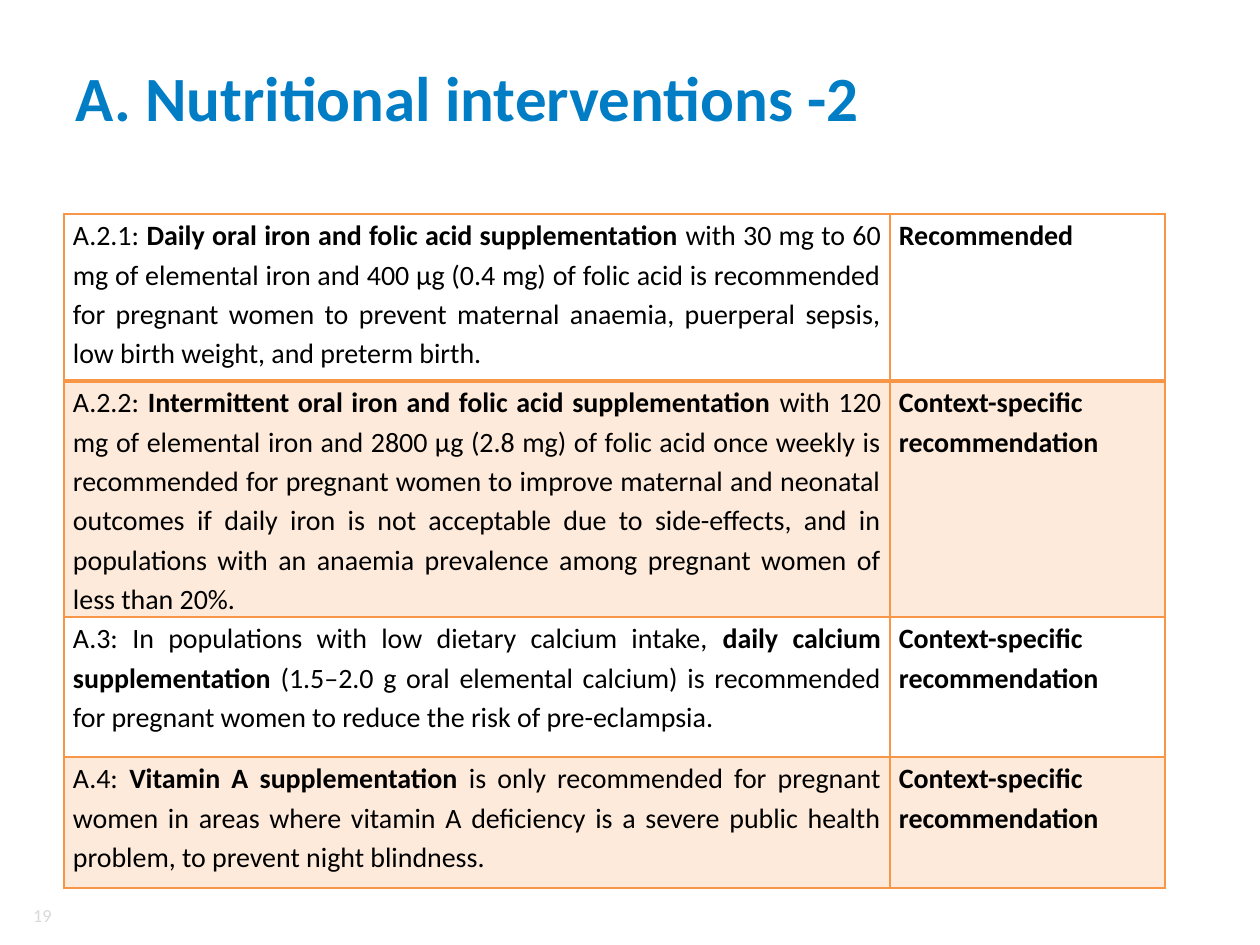
import pptx
import pptx.util
import pptx.dml.color
import pptx.enum.text
import pptx.oxml
import pptx.oxml.ns
import lxml.etree

SCALE = 914400 / 126
ALIGN = pptx.enum.text.PP_ALIGN
ANCHOR = pptx.enum.text.MSO_ANCHOR
THEME = {
    "font": "Calibri",
    "title": {"size": 36, "color": "007DC5"},
    "body": {"size": 16, "color": "000000"},
    "number": {"size": 10.5, "color": "D9D9D9"},
    "accent": "F79646",
    "tint": 20,
}


def px(length):
    return pptx.util.Emu(round(length * SCALE))


def add_span(para, text, style, bold=False):
    span = para.add_run()
    span.text = text
    formats = {"name": THEME["font"], "size": pptx.util.Pt(style["size"]), "bold": bold}
    for name, value in formats.items():
        setattr(span.font, name, value)
    span.font.color.rgb = pptx.dml.color.RGBColor.from_string(style["color"])


deck = pptx.Presentation()
deck.slide_width, deck.slide_height = px(1260), px(945)
page = deck.slides.add_slide(deck.slide_layouts[5])

title = page.shapes.title
number = page.shapes.add_textbox(px(15), px(900), px(49), px(30))
headings = [
    (title, (63, 38, 1134, 117), "A. Nutritional interventions -2", "title", ALIGN.LEFT, True),
    (number, (15, 900, 49, 30), "19", "number", ALIGN.RIGHT, False),
]
for box, place, text, style, alignment, bold in headings:
    for name, length in zip(("left", "top", "width", "height"), place):
        setattr(box, name, px(length))
    frame_format = {
        "word_wrap": True,
        "vertical_anchor": ANCHOR.MIDDLE,
        "auto_size": pptx.enum.text.MSO_AUTO_SIZE.NONE,
    }
    for name, value in frame_format.items():
        setattr(box.text_frame, name, value)
    para = box.text_frame.paragraphs[0]
    para.alignment = alignment
    add_span(para, text, THEME[style], bold)

recommendations = [
    (
        "A.2.1: ",
        "Daily oral iron and folic acid supplementation",
        " with 30 mg to 60 mg of elemental iron and 400 µg (0.4 mg) of folic acid is "
        "recommended for pregnant women to prevent maternal anaemia, puerperal sepsis, "
        "low birth weight, and preterm birth.",
        "Recommended",
    ),
    (
        "A.2.2: ",
        "Intermittent oral iron and folic acid supplementation ",
        "with 120 mg of elemental iron and 2800 µg (2.8 mg) of folic acid once weekly is "
        "recommended for pregnant women to improve maternal and neonatal outcomes if daily "
        "iron is not acceptable due to side-effects, and in populations with an anaemia "
        "prevalence among pregnant women of less than 20%. ",
        "Context-specific recommendation",
    ),
    (
        "A.3: In populations with low dietary calcium intake, ",
        "daily calcium supplementation",
        " (1.5–2.0 g oral elemental calcium) is recommended for pregnant women to reduce "
        "the risk of pre-eclampsia.",
        "Context-specific recommendation",
    ),
    (
        "A.4: ",
        "Vitamin A supplementation",
        " is only recommended for pregnant women in areas where vitamin A deficiency is a "
        "severe public health problem, to prevent night blindness.",
        "Context-specific recommendation",
    ),
]
column_widths = [826, 275]
row_heights = [167, 236, 140, 131]
table = page.shapes.add_table(
    len(row_heights), len(column_widths), px(64), px(214), px(sum(column_widths)), px(sum(row_heights))
).table
table.first_row = False
table.horz_banding = False
for column, width in zip(table.columns, column_widths):
    column.width = px(width)
for row, height in zip(table.rows, row_heights):
    row.height = px(height)

cell_format = {"margin_left": px(9), "margin_right": px(9), "margin_top": 0, "margin_bottom": 0}
for row_index, (code, topic, detail, verdict) in enumerate(recommendations):
    cell_spans = [[(code, False), (topic, True), (detail, False)], [(verdict, True)]]
    for column_index, spans in enumerate(cell_spans):
        cell = table.cell(row_index, column_index)
        for name, value in cell_format.items():
            setattr(cell, name, value)
        para = cell.text_frame.paragraphs[0]
        last_verdict = row_index == len(recommendations) - 1 and column_index == 1
        para.alignment = ALIGN.LEFT if last_verdict else ALIGN.JUSTIFY
        para.line_spacing = 1.15
        for text, bold in spans:
            add_span(para, text, THEME["body"], bold)

        properties = cell._tc.get_or_add_tcPr()
        if row_index % 2:
            cell.fill.solid()
            cell.fill.fore_color.rgb = pptx.dml.color.RGBColor.from_string(THEME["accent"])
            tint = properties.find(".//" + pptx.oxml.ns.qn("a:srgbClr"))
            alpha = lxml.etree.SubElement(tint, pptx.oxml.ns.qn("a:alpha"))
            alpha.set("val", str(THEME["tint"] * 1000))
        else:
            cell.fill.background()
        for position, side in enumerate("LRTB"):
            thick = (row_index, side) in ((0, "B"), (1, "T"))
            border = pptx.oxml.parse_xml(
                f'<a:ln{side} {pptx.oxml.ns.nsdecls("a")} w="{pptx.util.Pt(2 if thick else 1)}">'
                f'<a:solidFill><a:srgbClr val="{THEME["accent"]}"/></a:solidFill></a:ln{side}>'
            )
            properties.insert(position, border)

deck.save("out.pptx")
